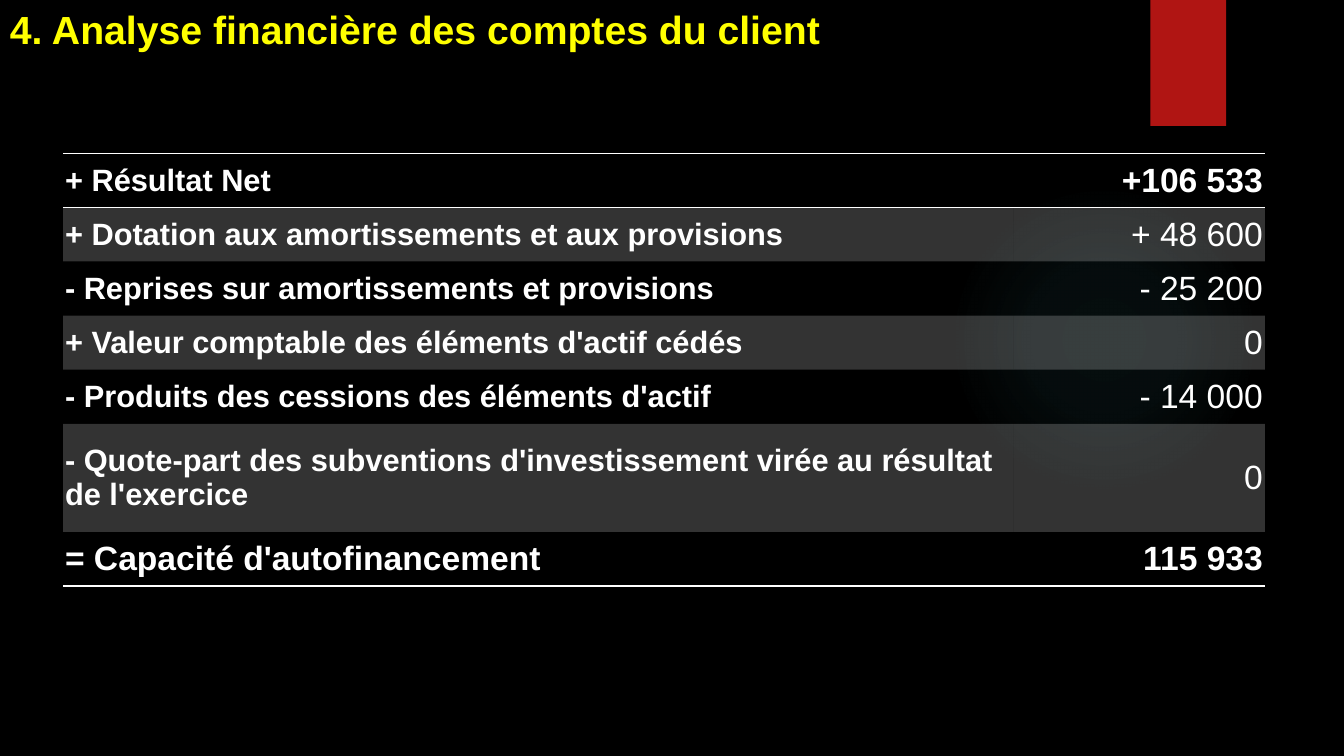
"""Build the slide on the client's self-financing capacity."""
from lxml import etree
from pptx import Presentation
from pptx.dml.color import RGBColor
from pptx.enum.shapes import MSO_SHAPE
from pptx.enum.text import MSO_ANCHOR, PP_ALIGN
from pptx.oxml import parse_xml
from pptx.oxml.ns import qn
from pptx.util import Pt

ELLIPSE, RECTANGLE = MSO_SHAPE.OVAL, MSO_SHAPE.RECTANGLE
MIDDLE = MSO_ANCHOR.MIDDLE
LEFT, RIGHT = PP_ALIGN.LEFT, PP_ALIGN.RIGHT
BLACK = RGBColor(0x00, 0x00, 0x00)
WHITE = RGBColor(0xFF, 0xFF, 0xFF)
YELLOW = RGBColor(0xFF, 0xFF, 0x00)
RED = RGBColor(0xB0, 0x15, 0x13)
TEAL = RGBColor(0x50, 0xB9, 0xC1)
DRAWING = 'xmlns:a="http://schemas.openxmlformats.org/drawingml/2006/main"'
NO_GRID_STYLE = "{2D5ABB26-0587-4C30-8999-92F81FD0307C}"


def write(paragraph, text, size, color, bold, align=LEFT):
    paragraph.alignment = align
    run = paragraph.add_run()
    run.text = text
    for key, value in {"name": "Arial", "size": Pt(size), "bold": bold}.items():
        setattr(run.font, key, value)
    run.font.color.rgb = color


presentation = Presentation()
presentation.slide_width, presentation.slide_height = Pt(960), Pt(540)
slide = presentation.slides.add_slide(presentation.slide_layouts[6])
slide.background.fill.solid()
slide.background.fill.fore_color.rgb = BLACK

glow = slide.shapes.add_shape(ELLIPSE, Pt(677.5), Pt(131.75), Pt(221.75), Pt(221.75))
glow.shadow.inherit = False
glow.line.fill.background()
glow.fill.background()
stops = "".join(
    f'<a:gs pos="{position * 1000}"><a:srgbClr val="{TEAL}">'
    f'<a:alpha val="{opacity * 1000}"/></a:srgbClr></a:gs>'
    for position, opacity in ((0, 7), (36, 6), (69, 0), (100, 0))
)
glow_fill = parse_xml(
    f'<a:gradFill {DRAWING}><a:gsLst>{stops}</a:gsLst><a:path path="circle">'
    '<a:fillToRect l="50000" t="50000" r="50000" b="50000"/></a:path></a:gradFill>'
)
glow_properties = glow.element.spPr
glow_properties.replace(glow_properties.find(qn("a:noFill")), glow_fill)

ribbon = slide.shapes.add_shape(RECTANGLE, Pt(821.75), Pt(0), Pt(54), Pt(90))
ribbon.shadow.inherit = False
ribbon.line.fill.background()
ribbon.fill.solid()
ribbon.fill.fore_color.rgb = RED
ribbon.element.spPr.find(qn("a:effectLst")).append(parse_xml(
    f'<a:outerShdw {DRAWING} blurRad="{Pt(3)}" dist="{Pt(2)}" dir="5400000">'
    f'<a:srgbClr val="{BLACK}"><a:alpha val="45000"/></a:srgbClr></a:outerShdw>'
))

title = slide.shapes.add_textbox(Pt(0), Pt(0), Pt(885), Pt(41)).text_frame
title.word_wrap = True
write(title.paragraphs[0], "4. Analyse financière des comptes du client", 28, YELLOW, True)

ENTRIES = [
    ("+ Résultat Net", "+106 533"),
    ("+ Dotation aux amortissements et aux provisions", "+ 48 600"),
    ("- Reprises sur amortissements et provisions", "- 25 200"),
    ("+ Valeur comptable des éléments d'actif cédés", "0"),
    ("- Produits des cessions des éléments d'actif", "- 14 000"),
    ("- Quote-part des subventions d'investissement virée au résultat de l'exercice", "0"),
    ("= Capacité d'autofinancement", "115 933"),
]
ROW_HEIGHT = 38.65
LAST = len(ENTRIES) - 1
TALL = LAST - 1
RULED_EDGES = {0: ("lnT", "lnB"), LAST: ("lnB",)}
CELL_FORMAT = {
    "vertical_anchor": MIDDLE,
    "margin_left": Pt(1.5),
    "margin_right": Pt(1.5),
    "margin_top": Pt(0),
    "margin_bottom": Pt(0),
}

cash_flow = slide.shapes.add_table(
    len(ENTRIES), 2, Pt(45), Pt(109.5), Pt(858.5), Pt(ROW_HEIGHT * (len(ENTRIES) + 1))
).table
cash_flow.first_row = cash_flow.horz_banding = False
cash_flow._tbl.tblPr.find(qn("a:tableStyleId")).text = NO_GRID_STYLE
for column, width in zip(cash_flow.columns, (679, 179.5)):
    column.width = Pt(width)

for index, entry in enumerate(ENTRIES):
    cash_flow.rows[index].height = Pt(ROW_HEIGHT * (2 if index == TALL else 1))
    for column, text in enumerate(entry):
        cell = cash_flow.cell(index, column)
        for key, value in CELL_FORMAT.items():
            setattr(cell, key, value)
        properties = cell._tc.get_or_add_tcPr()
        for edge in RULED_EDGES.get(index, ()):
            properties.append(parse_xml(
                f'<a:{edge} {DRAWING} w="{Pt(1)}"><a:solidFill>'
                f'<a:srgbClr val="{WHITE}"/></a:solidFill></a:{edge}>'
            ))
        if index % 2:
            cell.fill.solid()
            cell.fill.fore_color.rgb = WHITE
            tint = properties.find(qn("a:solidFill")).find(qn("a:srgbClr"))
            etree.SubElement(tint, qn("a:alpha")).set("val", "20000")
        else:
            cell.fill.background()
        is_amount = column == 1
        size = 24 if is_amount or index == LAST else 22
        bold = not is_amount or index in RULED_EDGES
        write(cell.text_frame.paragraphs[0], text, size, WHITE, bold, RIGHT if is_amount else LEFT)

presentation.save("out.pptx")
